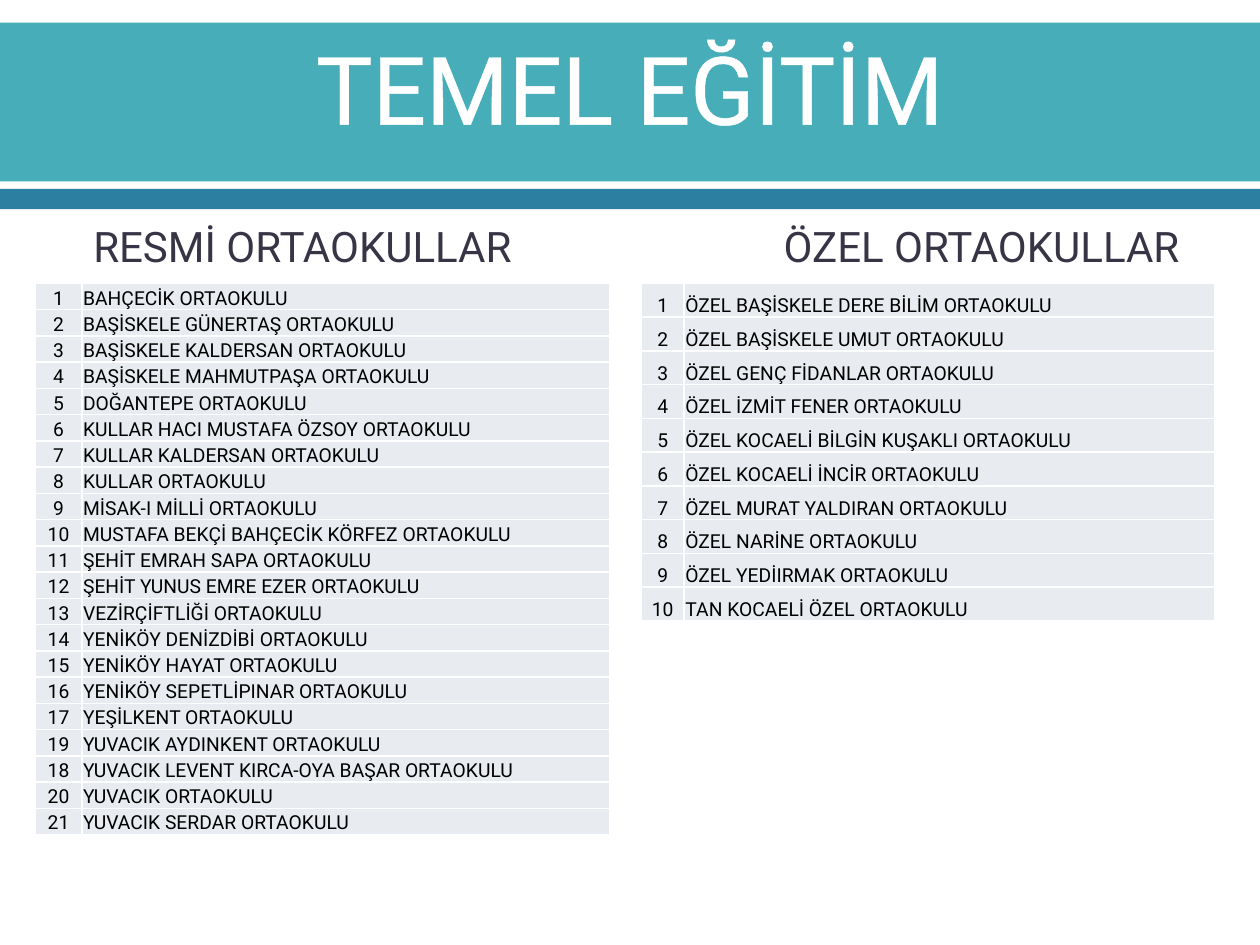
from lxml.etree import SubElement
from pptx import Presentation
from pptx.dml.color import RGBColor
from pptx.enum.shapes import MSO_SHAPE
from pptx.enum.text import MSO_ANCHOR, MSO_AUTO_SIZE, PP_ALIGN
from pptx.oxml.ns import qn
from pptx.util import Inches, Pt

FONT = "Roboto"
COLORS = {
    "header": "47AEB9",
    "stripe": "2C7FA0",
    "white": "FFFFFF",
    "heading": "373545",
    "cell": "E8ECF0",
    "black": "000000",
}
PUBLIC_NUMBERS = [*range(1, 18), 19, 18, 20, 21]
PUBLIC_SCHOOLS = [
    "BAHÇECİK ORTAOKULU",
    "BAŞİSKELE GÜNERTAŞ ORTAOKULU",
    "BAŞİSKELE KALDERSAN ORTAOKULU",
    "BAŞİSKELE MAHMUTPAŞA ORTAOKULU",
    "DOĞANTEPE ORTAOKULU",
    "KULLAR HACI MUSTAFA ÖZSOY ORTAOKULU",
    "KULLAR KALDERSAN ORTAOKULU",
    "KULLAR ORTAOKULU",
    "MİSAK-I MİLLİ ORTAOKULU",
    "MUSTAFA BEKÇİ BAHÇECİK KÖRFEZ ORTAOKULU",
    "ŞEHİT EMRAH SAPA ORTAOKULU",
    "ŞEHİT YUNUS EMRE EZER ORTAOKULU",
    "VEZİRÇİFTLİĞİ ORTAOKULU",
    "YENİKÖY DENİZDİBİ ORTAOKULU",
    "YENİKÖY HAYAT ORTAOKULU",
    "YENİKÖY SEPETLİPINAR ORTAOKULU",
    "YEŞİLKENT ORTAOKULU",
    "YUVACIK AYDINKENT ORTAOKULU",
    "YUVACIK LEVENT KIRCA-OYA BAŞAR ORTAOKULU",
    "YUVACIK ORTAOKULU",
    "YUVACIK SERDAR ORTAOKULU",
]
PRIVATE_SCHOOLS = [
    "ÖZEL BAŞİSKELE DERE BİLİM ORTAOKULU",
    "ÖZEL BAŞİSKELE UMUT ORTAOKULU",
    "ÖZEL GENÇ FİDANLAR ORTAOKULU",
    "ÖZEL İZMİT FENER ORTAOKULU",
    "ÖZEL KOCAELİ BİLGİN KUŞAKLI ORTAOKULU",
    "ÖZEL KOCAELİ İNCİR ORTAOKULU",
    "ÖZEL MURAT YALDIRAN ORTAOKULU",
    "ÖZEL NARİNE ORTAOKULU",
    "ÖZEL YEDİIRMAK ORTAOKULU",
    "TAN KOCAELİ ÖZEL ORTAOKULU",
]


def rgb(name):
    """Return a palette colour."""
    return RGBColor.from_string(COLORS[name])


def add_line(parent, tag, color, width):
    """Append a solid line element to parent and return it."""
    line = SubElement(parent, qn(tag), w=str(Pt(width)))
    fill = SubElement(line, qn("a:solidFill"))
    SubElement(fill, qn("a:srgbClr"), val=COLORS[color])
    return line


def write_text(frame, text, size, color, align=PP_ALIGN.LEFT, outline=None):
    """Write one formatted paragraph and return it."""
    paragraph = frame.paragraphs[0]
    paragraph.alignment = align
    run = paragraph.add_run()
    run.text = text
    run.font.size = Pt(size)
    run.font.name = FONT
    run.font.color.rgb = rgb(color)
    if outline:
        properties = run._r.get_or_add_rPr()
        properties.insert(0, add_line(properties, "a:ln", color, outline))
    return paragraph


def add_band(slide, order, top, height, color):
    """Add a full-width band behind the placeholders."""
    band = slide.shapes.add_shape(
        MSO_SHAPE.RECTANGLE, 0, Inches(top), Inches(10), Inches(height))
    band.shadow.inherit = False
    band.fill.solid()
    band.fill.fore_color.rgb = rgb(color)
    band.line.fill.background()
    slide.shapes._spTree.insert(2 + order, band._element)


def place(placeholder, left, top, width, height, anchor):
    """Move a placeholder and return its text frame."""
    placeholder.left, placeholder.top = Inches(left), Inches(top)
    placeholder.width, placeholder.height = Inches(width), Inches(height)
    frame = placeholder.text_frame
    frame.auto_size = MSO_AUTO_SIZE.NONE
    frame.word_wrap = True
    frame.vertical_anchor = anchor
    return frame


def write_heading(placeholder, text, left):
    """Write an unbulleted heading above a school table."""
    frame = place(placeholder, left, 1.7, 3.8, 0.52, MSO_ANCHOR.TOP)
    paragraph = write_text(frame, text, 24, "heading")
    paragraph.space_before = Pt(0)
    properties = paragraph._p.get_or_add_pPr()
    properties.set("marL", "0")
    properties.set("indent", "0")
    SubElement(properties, qn("a:buNone"))


def format_cell(cell, text, align):
    """Fill one table cell and give it white borders."""
    cell.margin_left = cell.margin_top = cell.margin_right = Inches(0.01)
    cell.margin_bottom = 0
    cell.vertical_anchor = MSO_ANCHOR.BOTTOM
    for side in "LRTB":
        add_line(cell._tc.get_or_add_tcPr(), f"a:ln{side}", "white", 1)
    cell.fill.solid()
    cell.fill.fore_color.rgb = rgb("cell")
    write_text(cell.text_frame, text, 11, "black", align=align)


def add_school_table(slide, numbers, schools, left, height, widths):
    """Add a numbered table of schools."""
    table = slide.shapes.add_table(
        len(schools), 2, Inches(left), Inches(2.25),
        Inches(sum(widths)), Inches(height)).table
    table.first_row = table.horz_banding = False
    for column, width in zip(table.columns, widths):
        column.width = Inches(width)
    for row, number, school in zip(table.rows, numbers, schools):
        row.height = Inches(height / len(schools))
        format_cell(row.cells[0], str(number), PP_ALIGN.CENTER)
        format_cell(row.cells[1], school, PP_ALIGN.LEFT)


def main():
    """Build and save the slide."""
    presentation = Presentation()
    presentation.slide_width, presentation.slide_height = Inches(10), Inches(7.5)
    slide = presentation.slides.add_slide(presentation.slide_layouts[3])
    add_band(slide, 0, 0.18, 1.26, "header")
    add_band(slide, 1, 1.5, 0.16, "stripe")

    title = place(slide.shapes.title, 0, 0, 10, 1.38, MSO_ANCHOR.MIDDLE)
    write_text(title, "TEMEL EĞİTİM", 54, "white",
               align=PP_ALIGN.CENTER, outline=1.1)
    write_heading(slide.placeholders[1], "RESMİ ORTAOKULLAR", 0.64)
    write_heading(slide.placeholders[2], "ÖZEL ORTAOKULLAR", 6.12)

    add_school_table(slide, PUBLIC_NUMBERS, PUBLIC_SCHOOLS,
                     0.28, 4.38, [0.37, 4.19])
    add_school_table(slide, range(1, 11), PRIVATE_SCHOOLS,
                     5.09, 2.68, [0.34, 4.21])
    presentation.save("out.pptx")


if __name__ == "__main__":
    main()
